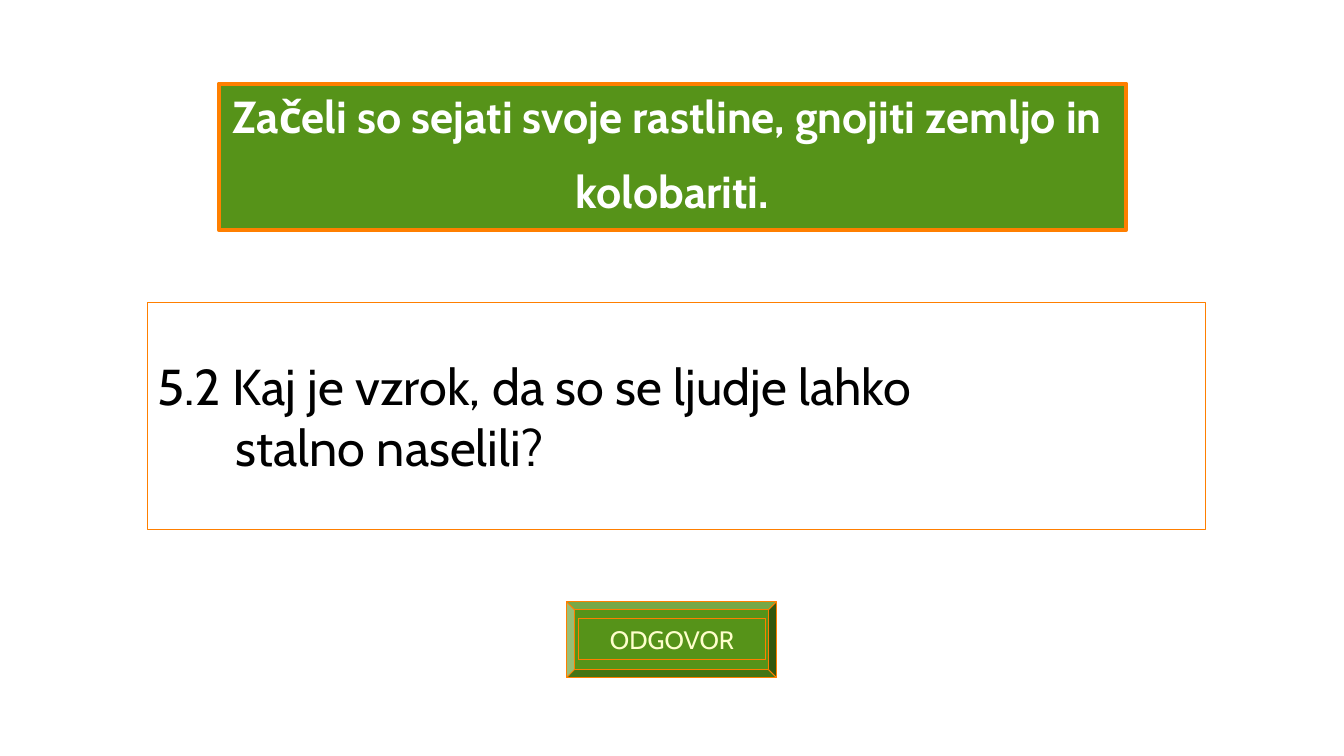
from pptx import Presentation
from pptx.dml.color import RGBColor
from pptx.enum.shapes import MSO_SHAPE as Shape
from pptx.enum.text import MSO_ANCHOR as Anchor, PP_ALIGN as Align
from pptx.util import Inches, Pt

COLORS = {"green": "569319", "orange": "FF7F00", "white": "FFFFFF",
          "cream": "FFFFCC", "black": "000000"}
WIDTH, HEIGHT = 13.33, 7.5

deck = Presentation()
deck.slide_width, deck.slide_height = Inches(WIDTH), Inches(HEIGHT)
page = deck.slides.add_slide(deck.slide_layouts[6])


def rgb(name):
    return RGBColor.from_string(COLORS[name])


def add_box(parent, lines, left, top, width, height, kind=Shape.RECTANGLE,
            fill="green", border=0.75, size=18, color="white", bold=False,
            align=Align.CENTER, anchor=Anchor.TOP, gap=0, indent=0):
    """Add a bordered shape; gap and indent apply after the first line."""
    box = parent.add_shape(kind, Inches(left), Inches(top), Inches(width), Inches(height))
    box.shadow.inherit = False
    box.fill.solid()
    box.fill.fore_color.rgb = rgb(fill)
    box.line.color.rgb = rgb("orange")
    box.line.width = Pt(border)
    frame = box.text_frame
    frame.word_wrap = True
    frame.vertical_anchor = anchor
    for number, text in enumerate(lines):
        para = frame.add_paragraph() if number else frame.paragraphs[0]
        para.alignment = align
        if number:
            para.space_before = Pt(gap)
            para._p.get_or_add_pPr().set("marL", str(Inches(indent)))
        span = para.add_run()
        span.text = text
        span.font.name = "Cabin"
        span.font.size = Pt(size)
        span.font.bold = bold
        span.font.color.rgb = rgb(color)
    return box


button = page.shapes.add_group_shape().shapes
bevel = add_box(button, [], 5.62, 5.97, 2.08, 0.75, kind=Shape.BEVEL)
bevel.adjustments[0] = 0.104
add_box(button, ["ODGOVOR"], 5.74, 6.14, 1.85, 0.4, color="cream")

add_box(page.shapes,
        ["Začeli so sejati svoje rastline, gnojiti zemljo in ", "kolobariti."],
        2.17, 0.83, 9, 1.45, border=3, size=32, bold=True, gap=15)

add_box(page.shapes,
        ["5.2 Kaj je vzrok, da so se ljudje lahko", "stalno naselili?"],
        1.46, HEIGHT * 0.4, 10.5, HEIGHT * 0.3, fill="white", size=36,
        color="black", align=Align.LEFT, anchor=Anchor.MIDDLE, indent=0.78)

deck.save("out.pptx")
